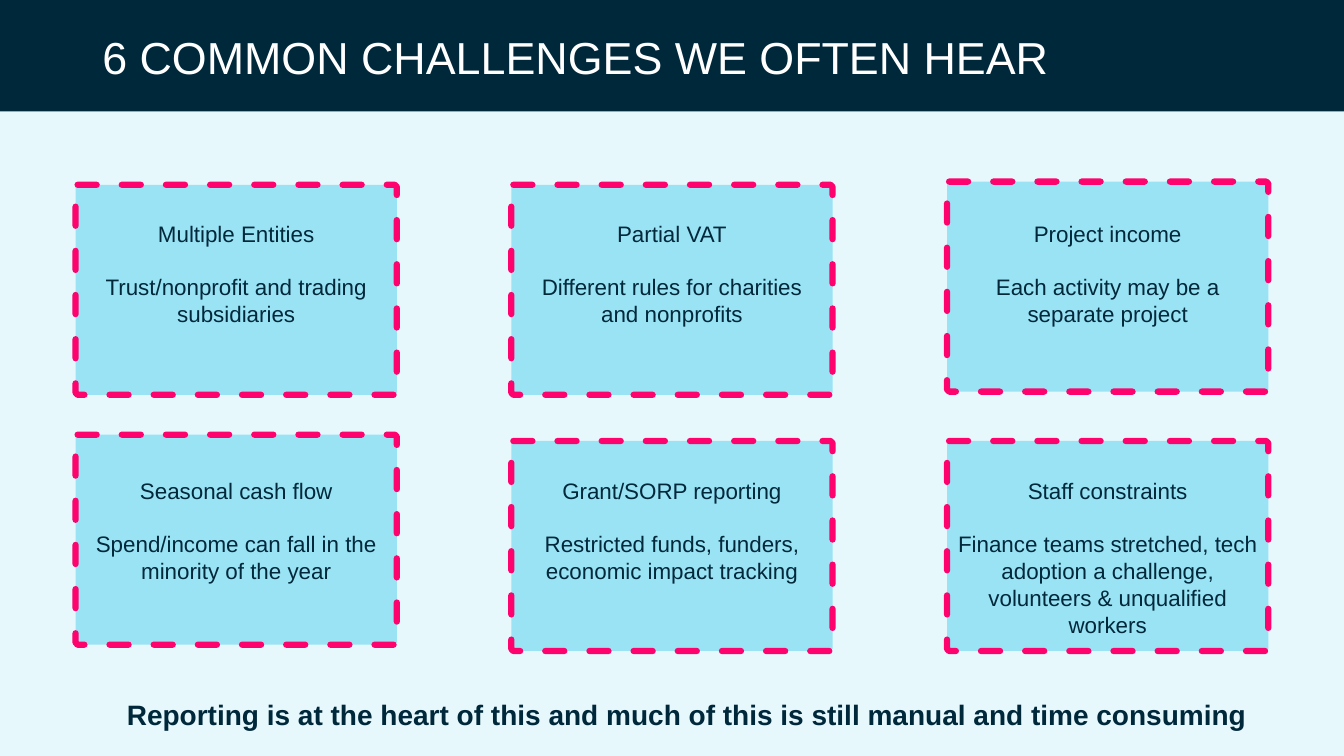
from dataclasses import dataclass

import pptx
import pptx.dml.color
import pptx.enum.dml
import pptx.enum.shapes
import pptx.enum.text
import pptx.util
from lxml import etree
from pptx.oxml.ns import qn

EMU_PER_PX = 9525  # 96 px to the inch
COLOURS = {
    "background": "E6F8FC",
    "navy": "00283B",
    "card": "99E3F4",
    "dash": "FE026E",
    "white": "FFFFFF",
}
FONT = "Arial"
CARD_LEFT, CARD_STEP = 72, 415
CARD_WIDTH, CARD_HEIGHT, CARD_BEVEL = 306, 200, 2
TEXT_TOPS = (205, 450)
BLANK_LINE_PT = 18.4


@dataclass(frozen=True)
class Challenge:
    row: int
    column: int
    top: int
    heading: str
    detail: str
    text_height: int = 113


CHALLENGES = [
    Challenge(0, 0, 176, "Multiple Entities", "Trust/nonprofit and trading subsidiaries"),
    Challenge(0, 1, 176, "Partial VAT", "Different rules for charities and nonprofits"),
    Challenge(0, 2, 173, "Project income", "Each activity may be a separate project"),
    Challenge(1, 0, 414, "Seasonal cash flow",
              "Spend/income can fall in the minority of the year"),
    Challenge(1, 1, 420, "Grant/SORP reporting",
              "Restricted funds, funders, economic impact tracking"),
    Challenge(1, 2, 420, "Staff constraints",
              "Finance teams stretched, tech adoption a challenge, "
              "volunteers & unqualified workers", 165),
]


def px(length: int) -> pptx.util.Emu:
    return pptx.util.Emu(length * EMU_PER_PX)


def rgb(name: str) -> pptx.dml.color.RGBColor:
    return pptx.dml.color.RGBColor.from_string(COLOURS[name])


def add_text_frame(slide, left: int, top: int, width: int, height: int):
    frame = slide.shapes.add_textbox(px(left), px(top), px(width), px(height)).text_frame
    frame.word_wrap = True
    return frame


def add_run(paragraph, text: str, size: int, colour: str, bold: bool = False) -> None:
    run = paragraph.add_run()
    run.text = text
    run.font.name = FONT
    run.font.size = pptx.util.Pt(size)
    run.font.bold = bold
    run.font.color.rgb = rgb(colour)


def draw_card(slide, left: int, top: int) -> None:
    right, bottom = left + CARD_WIDTH, top + CARD_HEIGHT
    bevel = CARD_BEVEL
    outline = slide.shapes.build_freeform(left + bevel, top, scale=EMU_PER_PX)
    outline.add_line_segments([
        (right - bevel, top), (right, top + bevel),
        (right, bottom - bevel), (right - bevel, bottom),
        (left + bevel, bottom), (left, bottom - bevel),
        (left, top + bevel),
    ], close=True)
    card = outline.convert_to_shape()
    card.shadow.inherit = False
    card.fill.solid()
    card.fill.fore_color.rgb = rgb("card")
    card.line.color.rgb = rgb("dash")
    card.line.width = pptx.util.Pt(4.5)
    card.line.dash_style = pptx.enum.dml.MSO_LINE.DASH
    line_xml = card.line.fill._xPr
    line_xml.set("cap", "rnd")
    etree.SubElement(line_xml, qn("a:round"))


def draw_challenge(slide, challenge: Challenge) -> None:
    left = CARD_LEFT + challenge.column * CARD_STEP
    draw_card(slide, left, challenge.top)
    frame = add_text_frame(slide, left, TEXT_TOPS[challenge.row],
                           CARD_WIDTH, challenge.text_height)
    frame.auto_size = pptx.enum.text.MSO_AUTO_SIZE.SHAPE_TO_FIT_TEXT
    heading, detail = frame.paragraphs[0], frame.add_paragraph()
    detail.space_before = pptx.util.Pt(BLANK_LINE_PT)
    for paragraph, text in ((heading, challenge.heading), (detail, challenge.detail)):
        paragraph.alignment = pptx.enum.text.PP_ALIGN.CENTER
        add_run(paragraph, text, 16, "navy")


def draw_header(slide) -> None:
    band = slide.shapes.add_shape(pptx.enum.shapes.MSO_SHAPE.RECTANGLE,
                                  px(0), px(0), px(1280), px(106))
    band.shadow.inherit = False
    band.fill.solid()
    band.fill.fore_color.rgb = rgb("navy")
    band.line.fill.background()
    title = add_text_frame(slide, 88, 17, 1104, 80)
    title.vertical_anchor = pptx.enum.text.MSO_ANCHOR.MIDDLE
    title.paragraphs[0].line_spacing = 0.9
    add_run(title.paragraphs[0], "6 COMMON CHALLENGES WE OFTEN HEAR", 32, "white")


def draw_conclusion(slide) -> None:
    frame = add_text_frame(slide, 72, 665, 1165, 32)
    frame.margin_left = frame.margin_right = frame.margin_top = frame.margin_bottom = 0
    frame.auto_size = pptx.enum.text.MSO_AUTO_SIZE.SHAPE_TO_FIT_TEXT
    conclusion = frame.paragraphs[0]
    conclusion.alignment = pptx.enum.text.PP_ALIGN.CENTER
    conclusion.line_spacing = pptx.util.Pt(23.3)
    add_run(conclusion, "Reporting is at the heart of this and much of this is "
            "still manual and time consuming", 20, "navy", bold=True)


def main() -> None:
    presentation = pptx.Presentation()
    presentation.slide_width, presentation.slide_height = px(1280), px(720)
    slide = presentation.slides.add_slide(presentation.slide_layouts[6])
    slide.background.fill.solid()
    slide.background.fill.fore_color.rgb = rgb("background")

    # Title band
    draw_header(slide)
    # Grid of challenges
    for challenge in CHALLENGES:
        draw_challenge(slide, challenge)
    # Closing statement
    draw_conclusion(slide)

    presentation.save("out.pptx")


if __name__ == "__main__":
    main()
